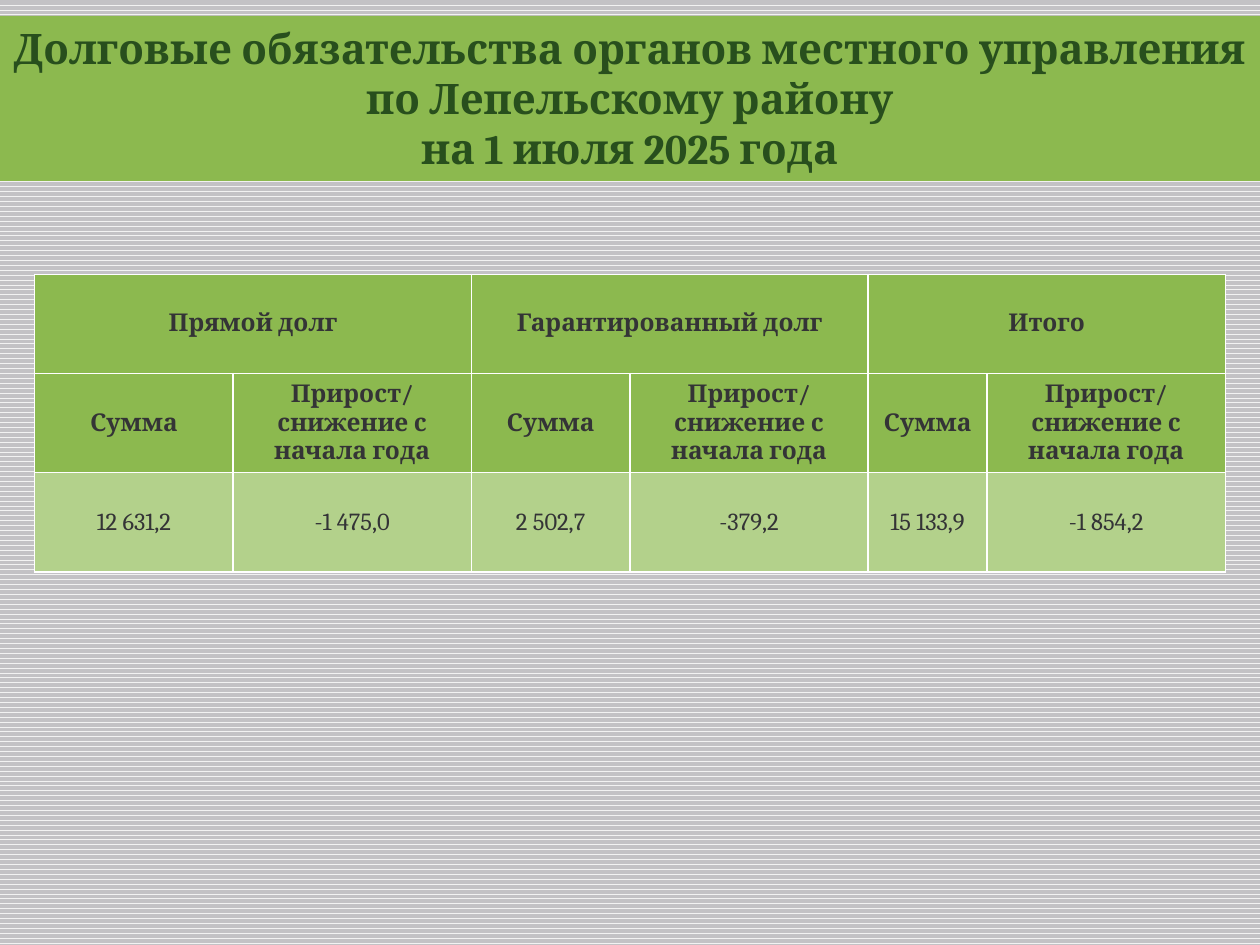
from dataclasses import dataclass

from lxml.etree import SubElement
from pptx import Presentation
from pptx.dml.color import RGBColor
from pptx.enum.dml import MSO_PATTERN
from pptx.enum.shapes import MSO_SHAPE
from pptx.enum.text import MSO_ANCHOR, PP_ALIGN
from pptx.oxml.ns import qn
from pptx.slide import Slide
from pptx.table import _Cell
from pptx.text.text import TextFrame
from pptx.util import Cm, Pt

FONT = "Cambria"
GREEN = RGBColor(0x8C, 0xB9, 0x4F)
LIGHT_GREEN = RGBColor(0xB3, 0xD1, 0x8B)
DARK_GREEN = RGBColor(0x28, 0x4F, 0x1D)
DARK_GRAY = RGBColor(0x34, 0x34, 0x36)
WHITE = RGBColor(0xFF, 0xFF, 0xFF)
STRIPE = RGBColor(0xF2, 0xF2, 0xF2)
BACKDROP = RGBColor(0xC3, 0xC2, 0xC5)

TITLE = (
    "Долговые обязательства органов местного управления\n"
    "по Лепельскому району\n"
    "на 1 июля 2025 года"
)
SUBHEADINGS = ("Сумма", "Прирост/снижение с начала года")
ROW_HEIGHT = Cm(2)
CHANGE_WIDTH = Cm(4.8)


@dataclass(frozen=True)
class DebtGroup:
    heading: str
    amount: str
    change: str
    amount_width: Cm


GROUPS = (
    DebtGroup("Прямой долг", "12 631,2", "-1 475,0", Cm(4)),
    DebtGroup("Гарантированный долг", "2 502,7", "-379,2", Cm(3.2)),
    DebtGroup("Итого", "15 133,9", "-1 854,2", Cm(2.4)),
)


def write_text(frame: TextFrame, text: str, size: int, color: RGBColor, bold: bool) -> None:
    frame.text = text
    for para in frame.paragraphs:
        para.alignment = PP_ALIGN.CENTER
        for span in para.runs:
            span.font.name = FONT
            span.font.size = Pt(size)
            span.font.bold = bold
            span.font.color.rgb = color


def add_borders(cell: _Cell) -> None:
    properties = cell._tc.get_or_add_tcPr()
    for position, side in enumerate(("a:lnL", "a:lnR", "a:lnT", "a:lnB")):
        line = SubElement(properties, qn(side), w=str(Pt(1)))
        fill = SubElement(line, qn("a:solidFill"))
        SubElement(fill, qn("a:srgbClr"), val=str(WHITE))
        # Borders come before the fill in the cell properties
        properties.insert(position, line)


def fill_cell(cell: _Cell, text: str, color: RGBColor, bold: bool) -> None:
    cell.fill.solid()
    cell.fill.fore_color.rgb = color
    cell.vertical_anchor = MSO_ANCHOR.MIDDLE
    write_text(cell.text_frame, text, 14, DARK_GRAY, bold)


def add_title(page: Slide) -> None:
    box = page.shapes.add_shape(MSO_SHAPE.RECTANGLE, Cm(-0.02), Cm(0.32), Cm(25.43), Cm(3.33))
    box.shadow.inherit = False
    box.fill.solid()
    box.fill.fore_color.rgb = GREEN
    box.line.fill.background()
    box.text_frame.word_wrap = True
    box.text_frame.vertical_anchor = MSO_ANCHOR.TOP
    write_text(box.text_frame, TITLE, 24, DARK_GREEN, True)


def add_debt_table(page: Slide) -> None:
    widths = [width for group in GROUPS for width in (group.amount_width, CHANGE_WIDTH)]
    table = page.shapes.add_table(
        3, len(widths), Cm(0.7), Cm(5.53), sum(widths), 3 * ROW_HEIGHT
    ).table
    for column, width in zip(table.columns, widths):
        column.width = width
    for row in table.rows:
        row.height = ROW_HEIGHT

    # Each debt group takes two columns under one merged heading
    for index, group in enumerate(GROUPS):
        first = 2 * index
        table.cell(0, first).merge(table.cell(0, first + 1))
        fill_cell(table.cell(0, first), group.heading, GREEN, True)
        for offset, value in enumerate((group.amount, group.change)):
            fill_cell(table.cell(1, first + offset), SUBHEADINGS[offset], GREEN, True)
            fill_cell(table.cell(2, first + offset), value, LIGHT_GREEN, False)
    for cell in table.iter_cells():
        add_borders(cell)


def main() -> None:
    deck = Presentation()
    deck.slide_width, deck.slide_height = Cm(25.4), Cm(19.05)
    page = deck.slides.add_slide(deck.slide_layouts[6])

    # Patterned background
    backdrop = page.background.fill
    backdrop.patterned()
    backdrop.pattern = MSO_PATTERN.WAVE
    backdrop.fore_color.rgb = STRIPE
    backdrop.back_color.rgb = BACKDROP

    add_debt_table(page)
    add_title(page)
    deck.save("out.pptx")


if __name__ == "__main__":
    main()
